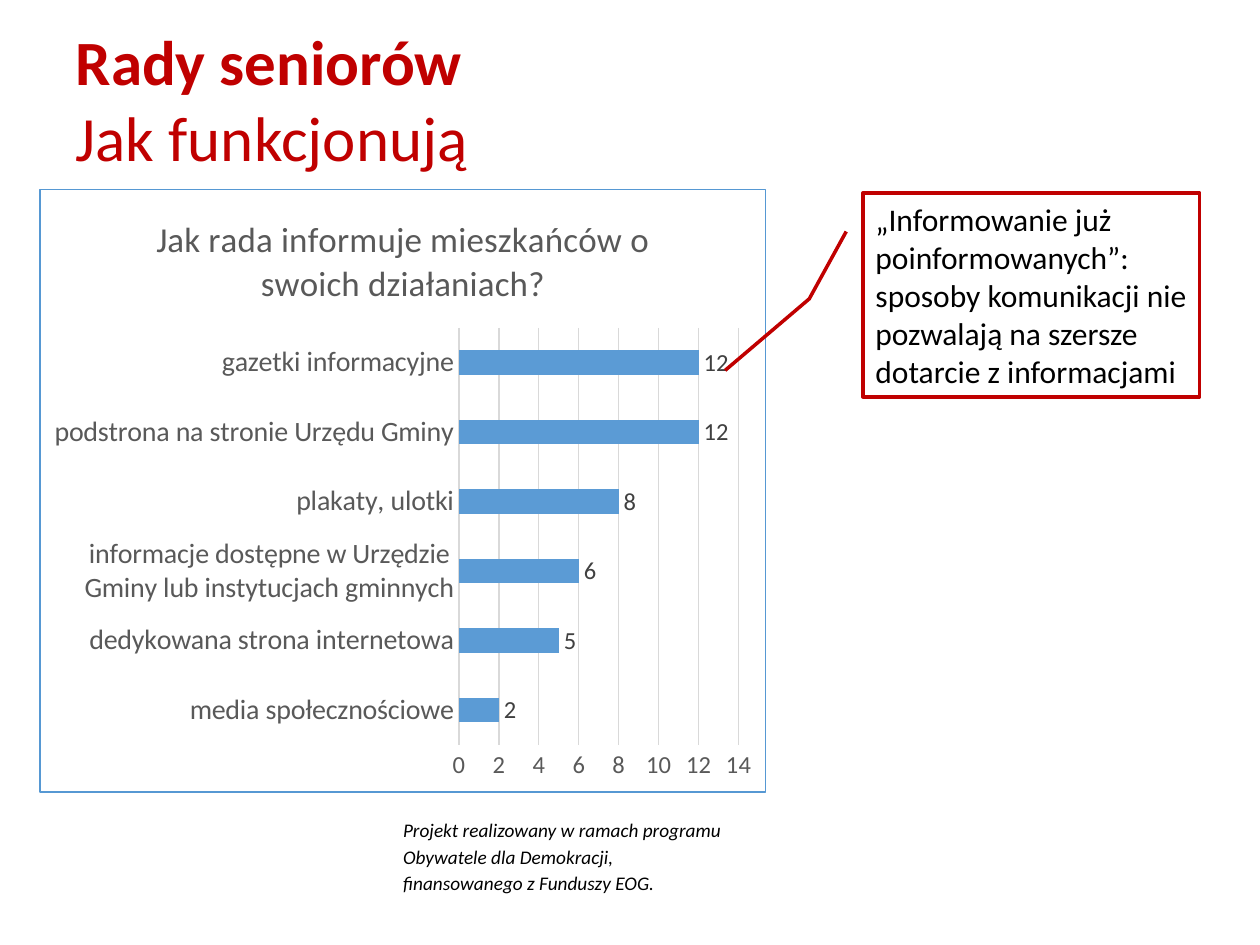
"""Build the slide on how senior councils inform residents."""
from lxml.etree import SubElement
from pptx import Presentation
from pptx.chart.data import CategoryChartData
from pptx.dml.color import RGBColor
from pptx.enum.chart import XL_CHART_TYPE as ChartType
from pptx.enum.chart import XL_LABEL_POSITION as LabelPosition
from pptx.enum.chart import XL_TICK_MARK as TickMark
from pptx.enum.shapes import MSO_SHAPE as Shape
from pptx.enum.text import MSO_ANCHOR as Anchor
from pptx.enum.text import PP_ALIGN as Align
from pptx.oxml import parse_xml
from pptx.oxml.ns import nsdecls, qn
from pptx.util import Pt

RED = RGBColor(0xC0, 0x00, 0x00)
BLACK = RGBColor(0x00, 0x00, 0x00)
WHITE = RGBColor(0xFF, 0xFF, 0xFF)
BAR_BLUE = RGBColor(0x5B, 0x9B, 0xD5)
FRAME_BLUE = RGBColor(0x56, 0x98, 0xD3)
AXIS_GREY = RGBColor(0x59, 0x59, 0x59)
LABEL_GREY = RGBColor(0x40, 0x40, 0x40)
GRID_GREY = RGBColor(0xD9, 0xD9, 0xD9)

ANSWERS = {
    "media społecznościowe": 2,
    "dedykowana strona internetowa": 5,
    "informacje dostępne w Urzędzie Gminy lub instytucjach gminnych": 6,
    "plakaty, ulotki": 8,
    "podstrona na stronie Urzędu Gminy": 12,
    "gazetki informacyjne": 12,
}


class SlideBuilder:
    """Hold the style and the current slide."""

    font_name = "Calibri"
    number_format = "###0"
    thin_line = Pt(0.75)

    def __init__(self, presentation):
        """Add a title-only slide."""
        self.slide = presentation.slides.add_slide(presentation.slide_layouts[5])

    def style_font(self, font, size, color, bold=False, italic=False):
        """Apply the typeface, size, colour and emphasis."""
        font.name = self.font_name
        font.size = Pt(size)
        font.bold = bold
        font.italic = italic
        font.color.rgb = color

    def style_line(self, line, color, width):
        """Apply a solid line."""
        line.color.rgb = color
        line.width = width

    def add_run(self, paragraph, text, size, color, **emphasis):
        """Add one styled run."""
        run = paragraph.add_run()
        run.text = text
        self.style_font(run.font, size, color, **emphasis)

    def add_title(self, heading, subheading, left, top, width, height):
        """Fill the title placeholder with a bold and a plain line."""
        title = self.slide.shapes.title
        title.left, title.top, title.width, title.height = map(Pt, (left, top, width, height))
        frame = title.text_frame
        frame.vertical_anchor = Anchor.MIDDLE
        paragraph = frame.paragraphs[0]
        paragraph.alignment = Align.LEFT
        self.add_run(paragraph, heading, 36, RED, bold=True)
        paragraph.add_line_break()
        self.add_run(paragraph, subheading, 36, RED)

    def add_note(self, text, left, top, width, height):
        """Add a small italic text box."""
        box = self.slide.shapes.add_textbox(*map(Pt, (left, top, width, height)))
        box.text_frame.word_wrap = True
        paragraph = box.text_frame.paragraphs[0]
        paragraph.line_spacing = 1.15
        self.add_run(paragraph, text, 11, BLACK, italic=True)

    def add_callout(self, texts, adjustments, left, top, width, height):
        """Add a bordered callout with a bent leader line."""
        callout = self.slide.shapes.add_shape(
            Shape.LINE_CALLOUT_2, *map(Pt, (left, top, width, height)))
        callout.shadow.inherit = False
        callout.fill.solid()
        callout.fill.fore_color.rgb = WHITE
        self.style_line(callout.line, RED, Pt(2))
        for index, value in enumerate(adjustments):
            callout.adjustments[index] = value
        frame = callout.text_frame
        frame.word_wrap = True
        frame.vertical_anchor = Anchor.MIDDLE
        for index, text in enumerate(texts):
            paragraph = frame.add_paragraph() if index else frame.paragraphs[0]
            paragraph.alignment = Align.LEFT
            self.add_run(paragraph, text, 18, BLACK)

    def add_bar_chart(self, title, answers, left, top, width, height):
        """Add a framed bar chart with value labels."""
        data = CategoryChartData(number_format=self.number_format)
        data.categories = list(answers)
        data.add_series("Series 1", list(answers.values()))
        chart = self.slide.shapes.add_chart(
            ChartType.BAR_CLUSTERED, *map(Pt, (left, top, width, height)), data).chart
        self.style_font(chart.font, 10, BLACK)
        chart.has_legend = False
        chart.has_title = True
        self.add_run(chart.chart_title.text_frame.paragraphs[0], title, 20, AXIS_GREY)
        chart.chart_title.include_in_layout = False
        self.style_plot(chart.plots[0])
        self.style_axes(chart.category_axis, chart.value_axis)
        self.frame_chart(chart)

    def style_plot(self, plot):
        """Set the bars and their labels."""
        plot.gap_width = 182
        plot.vary_by_categories = False
        series = plot.series[0]
        series.format.fill.solid()
        series.format.fill.fore_color.rgb = BAR_BLUE
        labels = series.data_labels
        labels.show_value = True
        labels.position = LabelPosition.OUTSIDE_END
        labels.number_format = self.number_format
        labels.number_format_is_linked = False
        self.style_font(labels.font, 14, LABEL_GREY)

    def style_axes(self, category_axis, value_axis):
        """Set the axis text, lines and gridlines."""
        for axis, size in ((category_axis, 16), (value_axis, 14)):
            axis.major_tick_mark = axis.minor_tick_mark = TickMark.NONE
            self.style_font(axis.tick_labels.font, size, AXIS_GREY)
        category_axis.has_major_gridlines = False
        self.style_line(category_axis.format.line, GRID_GREY, self.thin_line)
        value_axis.format.line.fill.background()
        value_axis.has_major_gridlines = True
        self.style_line(value_axis.major_gridlines.format.line, GRID_GREY, self.thin_line)
        value_axis.tick_labels.number_format = self.number_format
        value_axis.tick_labels.number_format_is_linked = False

    def frame_chart(self, chart):
        """Draw a thin border around the chart area."""
        properties = parse_xml(f"<c:spPr {nsdecls('c', 'a')}/>")
        SubElement(properties, qn("a:noFill"))
        line = SubElement(properties, qn("a:ln"), w=str(self.thin_line))
        fill = SubElement(line, qn("a:solidFill"))
        SubElement(fill, qn("a:srgbClr"), val=str(FRAME_BLUE))
        chart.element.find(qn("c:chart")).addnext(properties)


def main():
    """Create and save the presentation."""
    presentation = Presentation()
    presentation.slide_width = Pt(720)
    presentation.slide_height = Pt(540)
    builder = SlideBuilder(presentation)
    builder.add_note(
        "Projekt realizowany w ramach programu Obywatele dla Demokracji, "
        "finansowanego z Funduszy EOG.", 223.2, 462.24, 200.16, 53.28)
    builder.add_title("Rady seniorów", "Jak funkcjonują", 36, 18, 590.4, 76.32)
    builder.add_bar_chart(
        "Jak rada informuje mieszkańców o swoich działaniach?",
        ANSWERS, 22.5, 108, 415.5, 345)
    builder.add_callout(
        ["„Informowanie już poinformowanych”:",
         "sposoby komunikacji nie pozwalają na szersze dotarcie z informacjami"],
        [0.19, -0.05, 0.52, -0.16, 0.87, -0.41], 493.2, 110.16, 192.24, 116.64)
    presentation.save("out.pptx")


if __name__ == "__main__":
    main()
